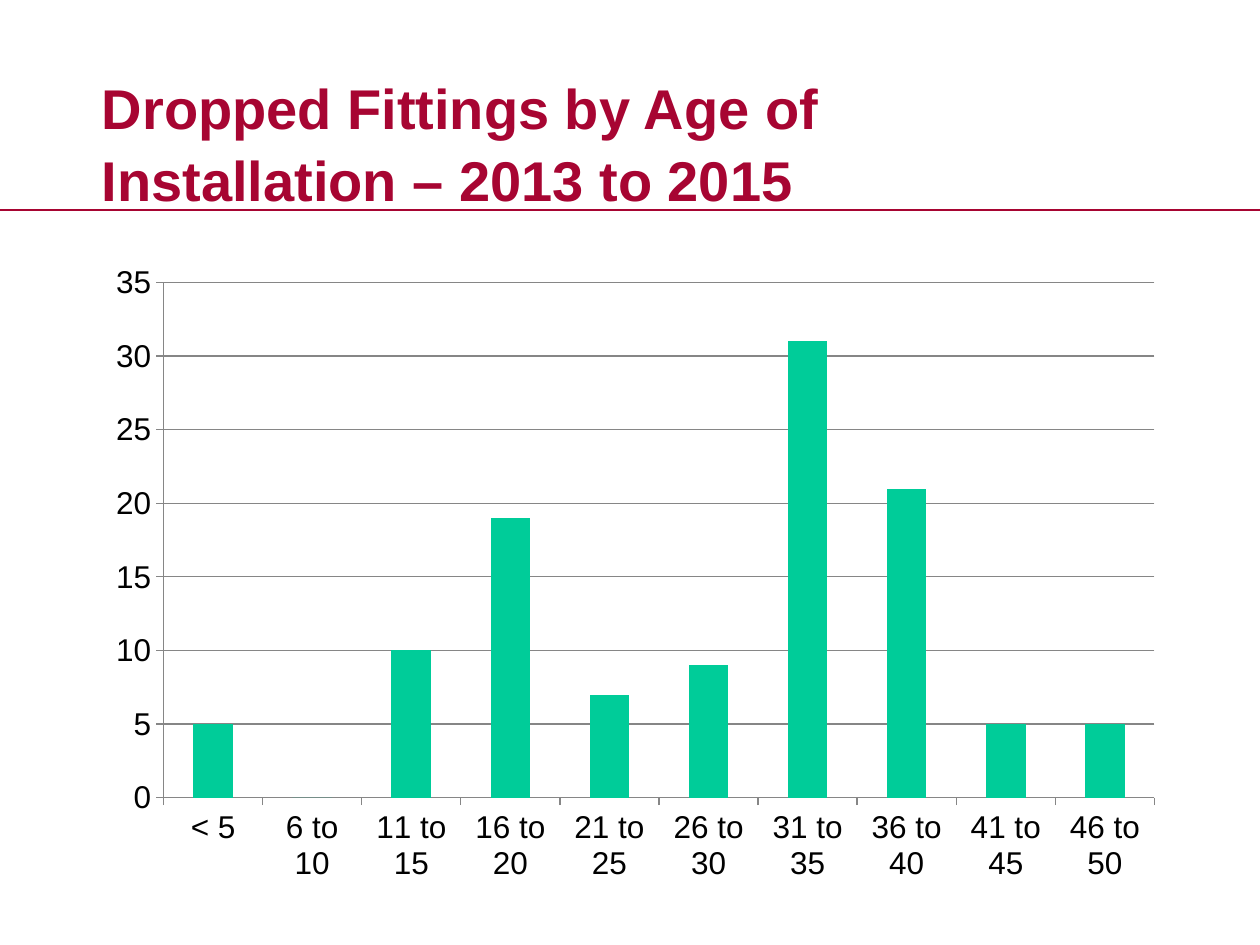
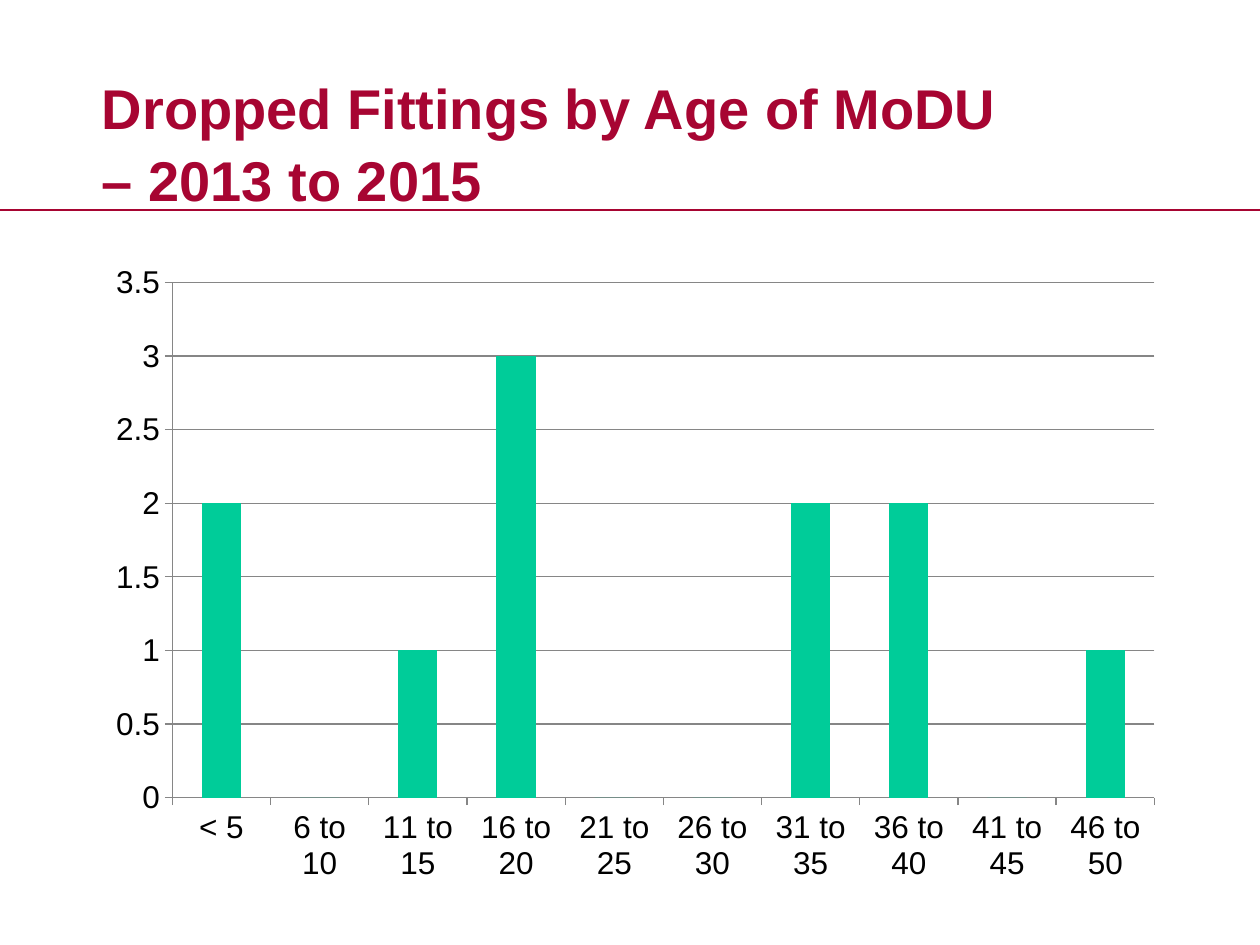
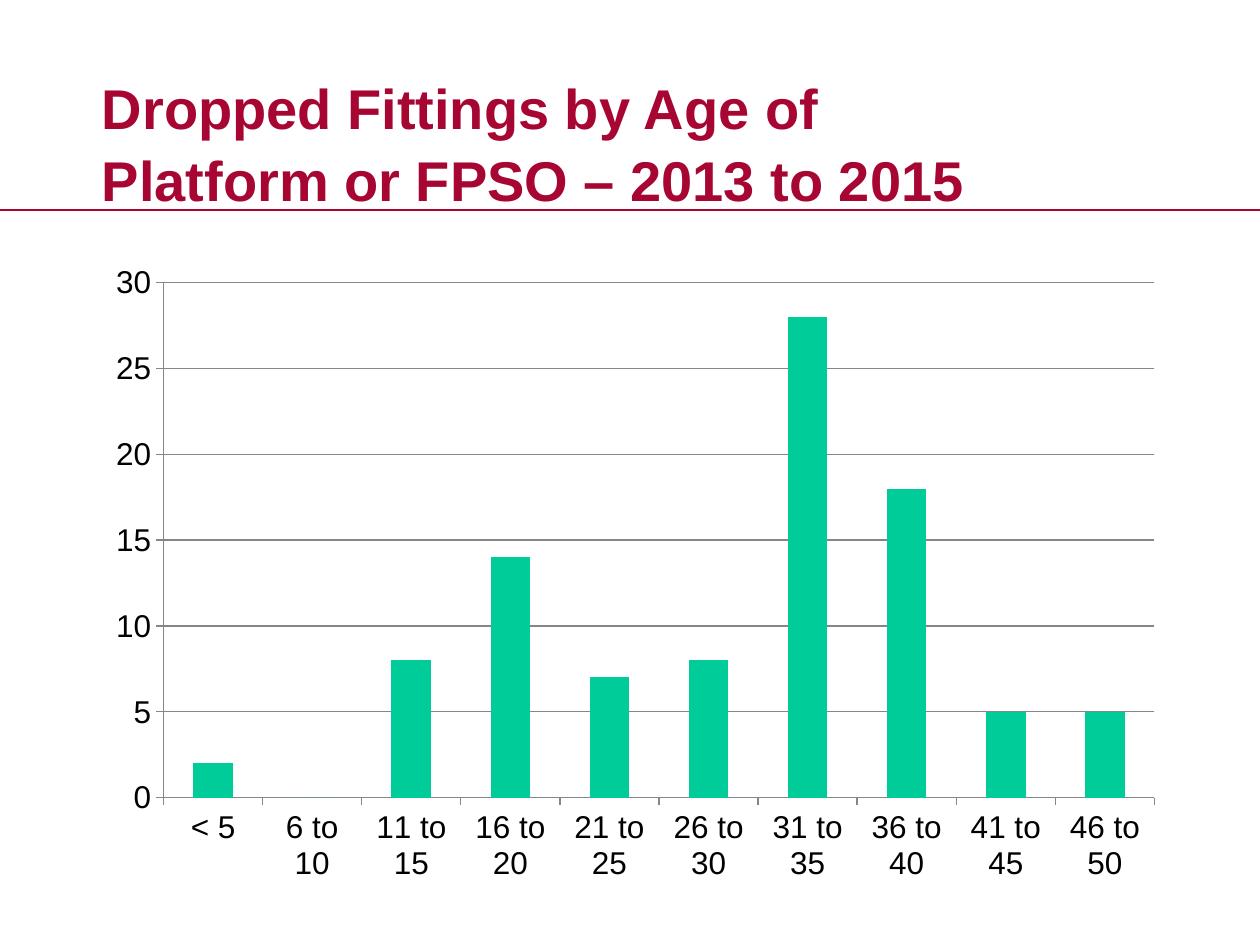
from pptx import Presentation
from pptx.chart.data import CategoryChartData
from pptx.dml.color import RGBColor
from pptx.enum.chart import XL_CHART_TYPE as CT, XL_TICK_MARK as TICK
from pptx.enum.shapes import MSO_CONNECTOR as CONN
from pptx.enum.text import MSO_ANCHOR as ANCHOR, MSO_AUTO_SIZE as FIT, PP_ALIGN as ALIGN
from pptx.oxml.ns import qn
from pptx.util import Emu, Pt
from lxml import etree

FONT = "Arial"
COLORS = {"red": "A70532", "bar": "00CC99", "axis": "868686", "text": "000000"}
AGES = ["< 5"] + [f"{n} to {n + 4}" for n in range(6, 47, 5)]
SLIDES = [
    ("Dropped Fittings by Age of Installation – 2013 to 2015",
     [5, 0, 10, 19, 7, 9, 31, 21, 5, 5], 35, 5),
    ("Dropped Fittings by Age of MoDU – 2013 to 2015",
     [2, 0, 1, 3, 0, 0, 2, 2, 0, 1], 3.5, 0.5),
    ("Dropped Fittings by Age of Platform or FPSO – 2013 to 2015",
     [2, 0, 8, 14, 7, 8, 28, 18, 5, 5], 30, 5),
]


def px(*lengths):
    return [Emu(n * 9525) for n in lengths]


def style_font(font, size, color, bold):
    font.name = FONT
    font.size = Pt(size)
    font.bold = bold
    font.color.rgb = RGBColor.from_string(COLORS[color])


prs = Presentation()
prs.slide_width, prs.slide_height = px(960, 720)

for title, values, top, step in SLIDES:
    s = prs.slides.add_slide(prs.slide_layouts[5])

    rule = s.shapes.add_connector(CONN.STRAIGHT, *px(0, 160, 960, 160))
    rule.line.color.rgb = RGBColor.from_string(COLORS["red"])
    rule.line.width = Pt(1.25)
    etree.SubElement(rule.line._get_or_add_ln().getparent(), qn("a:effectLst"))

    sp = s.shapes.title
    sp.left, sp.top, sp.width, sp.height = px(68, 63, 717, 89)
    tf = sp.text_frame
    tf.word_wrap = True
    tf.auto_size = FIT.NONE
    tf.vertical_anchor = ANCHOR.MIDDLE
    p = tf.paragraphs[0]
    p.alignment = ALIGN.LEFT
    p.line_spacing = 1.06
    r = p.add_run()
    r.text = title
    style_font(r.font, 32, "red", True)

    data = CategoryChartData()
    data.categories = AGES
    data.add_series("Series 1", values)
    chart = s.shapes.add_chart(CT.COLUMN_CLUSTERED, *px(72, 192, 824, 489), data).chart
    chart.has_legend = False
    chart.has_title = False
    style_font(chart.font, 18, "text", False)

    plot = chart.plots[0]
    plot.gap_width = 150
    plot.vary_by_categories = False
    fill = plot.series[0].format.fill
    fill.solid()
    fill.fore_color.rgb = RGBColor.from_string(COLORS["bar"])

    val = chart.value_axis
    val.minimum_scale, val.maximum_scale, val.major_unit = 0, top, step
    val.has_major_gridlines = True
    for axis in (chart.category_axis, val):
        axis.major_tick_mark = TICK.OUTSIDE
        axis.minor_tick_mark = TICK.NONE
    for part in (chart.category_axis, val, val.major_gridlines):
        part.format.line.color.rgb = RGBColor.from_string(COLORS["axis"])
        part.format.line.width = Pt(0.75)

prs.save("out.pptx")
